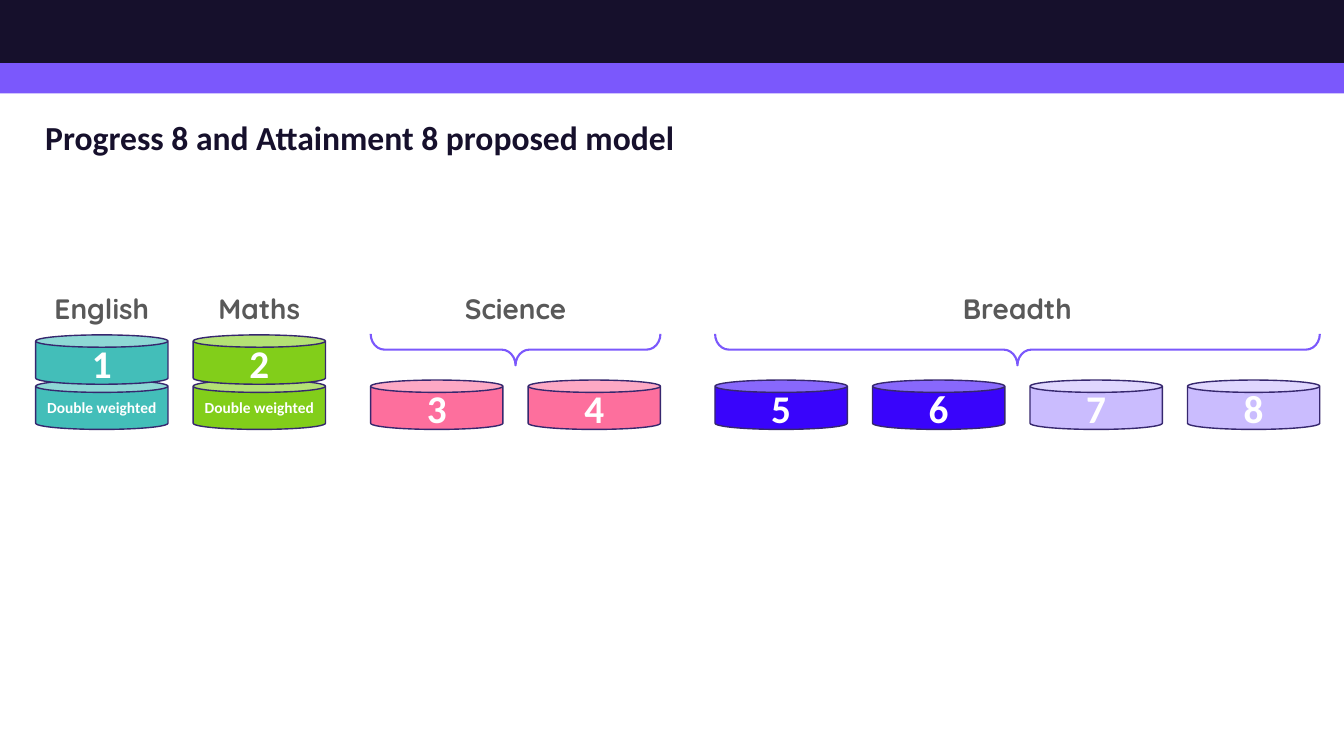
from pptx import Presentation
from pptx import util as u
from pptx.dml.color import RGBColor
from pptx.enum import shapes, text

PX = 9525  # EMU per px, 96 px to the inch

NAVY = RGBColor(0x16, 0x10, 0x2C)
VIOLET = RGBColor(0x7B, 0x58, 0xFC)
OUTLINE = RGBColor(0x36, 0x27, 0x6E)
TEAL = RGBColor(0x43, 0xBE, 0xB9)
GREEN = RGBColor(0x82, 0xCE, 0x1A)
PINK = RGBColor(0xFD, 0x6F, 0x9D)
BLUE = RGBColor(0x39, 0x04, 0xFB)
LILAC = RGBColor(0xCA, 0xBC, 0xFE)
GREY = RGBColor(0x59, 0x59, 0x59)
WHITE = RGBColor(0xFF, 0xFF, 0xFF)

PAGE_WIDTH, PAGE_HEIGHT = 1280, 720
CAN_WIDTH, CAN_HEIGHT, CAN_PITCH = 126, 47, 150
UPPER_TOP, LOWER_TOP = 319, 362
LABEL_TOP, LABEL_HEIGHT = 273, 42
BRACE_TOP, BRACE_DEPTH = 318, 30

# Subject, left edge, can colours, whether it counts twice
GROUPS = [
    ("English", 34, [TEAL], True),
    ("Maths", 184, [GREEN], True),
    ("Science", 353, [PINK, PINK], False),
    ("Breadth", 681, [BLUE, BLUE, LILAC, LILAC], False),
]


def write(box, words, size=20, font="Calibri", color=WHITE,
          align=text.PP_ALIGN.CENTER, anchor=text.MSO_ANCHOR.MIDDLE,
          inset=(0, 0), spacing=None):
    frame = box.text_frame
    frame.word_wrap = True
    frame.vertical_anchor = anchor
    frame.margin_left = frame.margin_right = inset[0] * PX
    frame.margin_top = frame.margin_bottom = inset[1] * PX
    para = frame.paragraphs[0]
    para.alignment = align
    para.line_spacing = spacing
    span = para.add_run()
    span.text = words
    span.font.size = u.Pt(size)
    span.font.name = font
    span.font.bold = True
    span.font.color.rgb = color


def add_box(page, left, top, width, height, words, **style):
    box = page.shapes.add_textbox(left * PX, top * PX, width * PX, height * PX)
    write(box, words, **style)


def add_shape(page, kind, left, top, width, height, fill=None, line=None, weight=1):
    shape = page.shapes.add_shape(kind, round(left * PX), round(top * PX),
                                  width * PX, height * PX)
    shape.shadow.inherit = False
    if fill is None:
        shape.fill.background()
    else:
        shape.fill.solid()
        shape.fill.fore_color.rgb = fill
    if line is None:
        shape.line.fill.background()
    else:
        shape.line.color.rgb = line
        shape.line.width = u.Pt(weight)
    return shape


def add_can(page, left, top, fill, words, size=28):
    can = add_shape(page, shapes.MSO_SHAPE.CAN, left, top,
                    CAN_WIDTH, CAN_HEIGHT, fill, OUTLINE)
    write(can, words, size=size)


def add_brace(page, left, width):
    # A right brace turned a quarter, so that its point faces down
    brace = add_shape(page, shapes.MSO_SHAPE.RIGHT_BRACE,
                      left + (width - BRACE_DEPTH) / 2,
                      BRACE_TOP + (BRACE_DEPTH - width) / 2,
                      BRACE_DEPTH, width, line=VIOLET, weight=1.5)
    brace.rotation = 90
    brace.adjustments[0] = 0.44


def add_group(page, label, left, colors, doubled, first):
    width = (len(colors) - 1) * CAN_PITCH + CAN_WIDTH
    add_box(page, left, LABEL_TOP, width, LABEL_HEIGHT, label, font="Quicksand",
            color=GREY, anchor=text.MSO_ANCHOR.TOP, inset=(4, 5))
    for index, color in enumerate(colors):
        can_left = left + index * CAN_PITCH
        if doubled:
            add_can(page, can_left, LOWER_TOP, color, "Double weighted", size=11)
        top = UPPER_TOP if doubled else LOWER_TOP
        add_can(page, can_left, top, color, str(first + index))
    if len(colors) > 1:
        add_brace(page, left, width)


def main():
    deck = Presentation()
    deck.slide_width = PAGE_WIDTH * PX
    deck.slide_height = PAGE_HEIGHT * PX
    page = deck.slides.add_slide(deck.slide_layouts[6])

    # Header bands
    add_shape(page, shapes.MSO_SHAPE.RECTANGLE, 0, 0, PAGE_WIDTH, 60, NAVY)
    add_shape(page, shapes.MSO_SHAPE.RECTANGLE, 0, 60, PAGE_WIDTH, 29, VIOLET)

    # Title
    add_box(page, 34, 106, 631, 54, "Progress 8 and Attainment 8 proposed model",
            size=24, color=NAVY, align=text.PP_ALIGN.LEFT, inset=(9, 5), spacing=0.9)

    # Subject groups, numbered from left to right
    first = 1
    for label, left, colors, doubled in GROUPS:
        add_group(page, label, left, colors, doubled, first)
        first += len(colors)

    deck.save("out.pptx")


if __name__ == "__main__":
    main()
